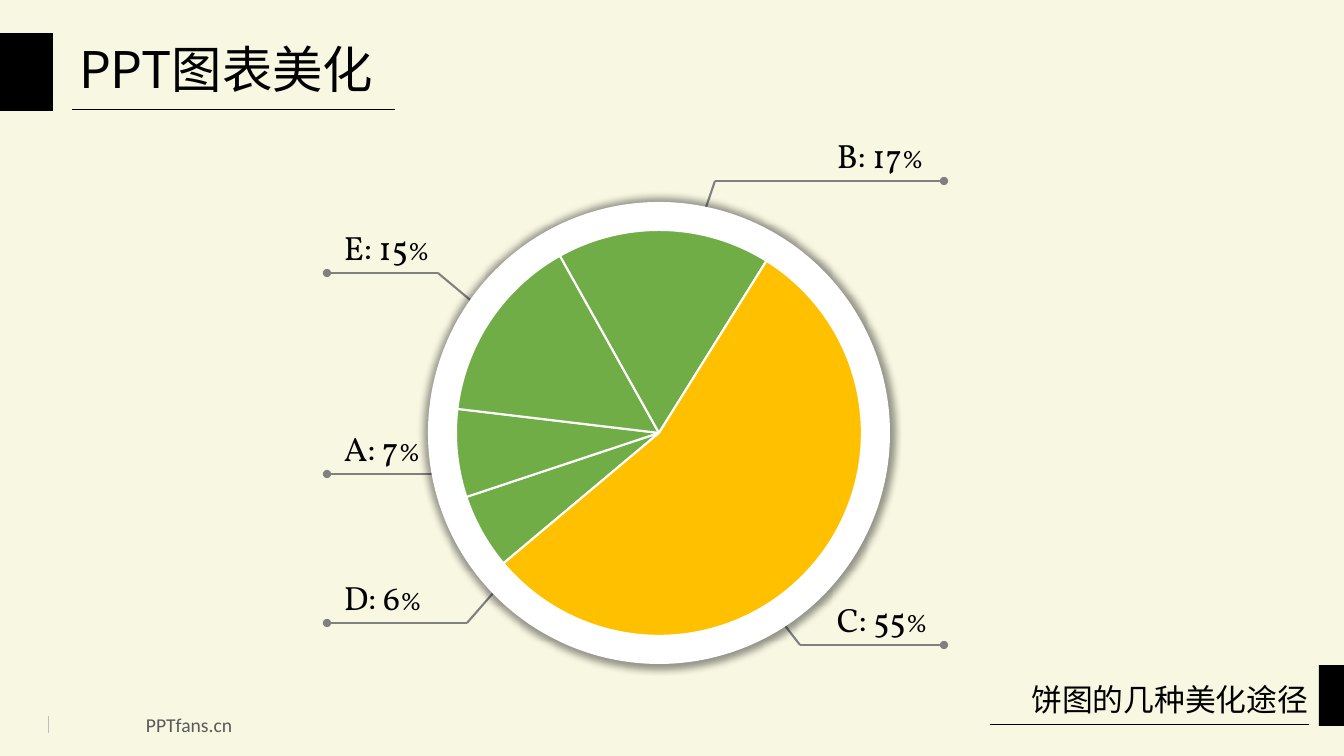
"""Build a slide with a ringed pie chart and leader-line labels."""
from lxml import etree
from pptx import Presentation
from pptx.chart.data import CategoryChartData
from pptx.dml.color import RGBColor
from pptx.enum.chart import XL_CHART_TYPE
from pptx.enum.shapes import MSO_CONNECTOR, MSO_SHAPE
from pptx.enum.text import MSO_ANCHOR, PP_ALIGN
from pptx.oxml import parse_xml
from pptx.oxml.ns import nsdecls, qn
from pptx.util import Emu, Pt

PIE = XL_CHART_TYPE.PIE
STRAIGHT = MSO_CONNECTOR.STRAIGHT
RECTANGLE, OVAL = MSO_SHAPE.RECTANGLE, MSO_SHAPE.OVAL
LEFT, RIGHT = PP_ALIGN.LEFT, PP_ALIGN.RIGHT
TOP = MSO_ANCHOR.TOP

THEME = {
    "paper": RGBColor.from_string("F8F7E2"),
    "ink": RGBColor.from_string("000000"),
    "white": RGBColor.from_string("FFFFFF"),
    "leader": RGBColor.from_string("808080"),
    "tick": RGBColor.from_string("BFBFBF"),
    "footer": RGBColor.from_string("595959"),
    "green": RGBColor.from_string("70AD47"),
    "amber": RGBColor.from_string("FFC000"),
    "cjk": "Noto Sans CJK SC",
    "serif": "Vollkorn",
    "sans": "Calibri",
    "title_size": 36,
    "label_size": 24,
    "caption_size": 22,
    "percent_size": 18,
    "footer_size": 14,
}


def px(*lengths):
    """Turn pixel lengths into EMU."""
    return [Emu(round(length * 914400 / 100.8)) for length in lengths]


def write(frame, runs, font_name, color, align=LEFT, wrap=True):
    """Fill a text frame with one paragraph of (text, size) runs."""
    frame.word_wrap = wrap
    frame.vertical_anchor = TOP
    paragraph = frame.paragraphs[0]
    paragraph.alignment = align
    for text, size in runs:
        run = paragraph.add_run()
        run.text = text
        for attribute, value in {"name": font_name, "size": Pt(size)}.items():
            setattr(run.font, attribute, value)
        run.font.color.rgb = color
        east_asian = etree.SubElement(run.font._element, qn("a:ea"))
        east_asian.set("typeface", font_name)


deck = Presentation()
deck.slide_width, deck.slide_height = px(1344, 756)
slide = deck.slides.add_slide(deck.slide_layouts[5])
slide.background.fill.solid()
slide.background.fill.fore_color.rgb = THEME["paper"]

title = slide.shapes.title
title.left, title.top, title.width, title.height = px(69, 33, 539, 72)
write(title.text_frame, [("PPT图表美化", THEME["title_size"])], THEME["cjk"], THEME["ink"])

for bar_box in [(0, 33, 53, 78), (1319, 665, 25, 61)]:
    bar = slide.shapes.add_shape(RECTANGLE, *px(*bar_box))
    bar.shadow.inherit = False
    bar.fill.solid()
    bar.fill.fore_color.rgb = THEME["ink"]
    bar.line.fill.background()

lines = [
    ((72, 109), (395, 109), "ink", 0.5, False),
    ((990, 724), (1309, 724), "ink", 0.5, False),
    ((49, 733), (49, 716), "tick", 0.75, False),
]
leaders = [
    ("C: 55", (773, 610), (800, 645), 944, 827),
    ("D: 6", (508, 576), (467, 623), 327, 334),
    ("A: 7", None, (457, 474), 327, 334),
    ("E: 15", (487, 314), (438, 273), 327, 334),
    ("B: 17", (701, 222), (715, 181), 944, 827),
]
for label, rim, elbow, dot_x, label_x in leaders:
    if rim:
        lines.append((rim, elbow, "leader", 1.5, False))
    lines.append((elbow, (dot_x, elbow[1]), "leader", 1.5, True))
    label_area = slide.shapes.add_textbox(*px(label_x, elbow[1] - 51, 134, 50))
    label_runs = [(label, THEME["label_size"]), ("%", THEME["percent_size"])]
    write(label_area.text_frame, label_runs, THEME["serif"], THEME["ink"])

for start, end, color, weight, dotted in lines:
    stroke = slide.shapes.add_connector(STRAIGHT, *px(*start, *end))
    stroke.line.color.rgb = THEME[color]
    stroke.line.width = Pt(weight)
    if dotted:
        etree.SubElement(stroke.line._get_or_add_ln(), qn("a:tailEnd")).set("type", "oval")
    etree.SubElement(stroke._element.spPr, qn("a:effectLst"))

ring = slide.shapes.add_shape(OVAL, *px(442, 216, 434, 434))
ring.fill.solid()
ring.fill.fore_color.rgb = THEME["white"]
ring.line.color.rgb = THEME["white"]
ring.line.width = Pt(20)
ring._element.spPr.append(parse_xml(
    f'<a:effectLst {nsdecls("a")}><a:outerShdw blurRad="63500" sx="102000" sy="102000" '
    'algn="ctr" rotWithShape="0"><a:srgbClr val="000000"><a:alpha val="40000"/>'
    '</a:srgbClr></a:outerShdw></a:effectLst>'))

shares = CategoryChartData()
shares.categories = ["1", "2", "3", "4", "5"]
shares.add_series("Series 1", (6, 7, 15, 17, 55))
chart_x, chart_y, chart_w, chart_h = 380, 190, 741, 490
pie_x, pie_y, pie_size = 456, 230, 406
chart = slide.shapes.add_chart(PIE, *px(chart_x, chart_y, chart_w, chart_h), shares).chart
for attribute, value in {"has_title": False, "has_legend": False}.items():
    setattr(chart, attribute, value)
for attribute, value in {"name": THEME["sans"], "size": Pt(THEME["percent_size"])}.items():
    setattr(chart.font, attribute, value)
chart.font.color.rgb = THEME["ink"]

pie = chart.plots[0]
pie.vary_by_categories = True
for index, color in enumerate(["green"] * 4 + ["amber"]):
    wedge = pie.series[0].points[index].format
    wedge.fill.solid()
    wedge.fill.fore_color.rgb = THEME[color]
    wedge.line.color.rgb = THEME["white"]
    wedge.line.width = Pt(1.5)

pie_xml = pie._element
for old_angle in pie_xml.findall(qn("c:firstSliceAng")):
    pie_xml.remove(old_angle)
etree.SubElement(pie_xml, qn("c:firstSliceAng")).set("val", "230")
plot_area = pie_xml.getparent()
for old_layout in plot_area.findall(qn("c:layout")):
    plot_area.remove(old_layout)
layout = etree.Element(qn("c:layout"))
manual = etree.SubElement(layout, qn("c:manualLayout"))
for tag, value in {
    "layoutTarget": "inner",
    "xMode": "edge",
    "yMode": "edge",
    "x": (pie_x - chart_x) / chart_w,
    "y": (pie_y - chart_y) / chart_h,
    "w": pie_size / chart_w,
    "h": pie_size / chart_h,
}.items():
    etree.SubElement(manual, qn(f"c:{tag}")).set("val", str(value))
plot_area.insert(0, layout)

footer = slide.shapes.add_textbox(*px(136, 708, 108, 34))
write(footer.text_frame, [("PPTfans.cn", THEME["footer_size"])], THEME["sans"],
      THEME["footer"], wrap=False)
caption = slide.shapes.add_textbox(*px(978, 676, 340, 47))
write(caption.text_frame, [("饼图的几种美化途径", THEME["caption_size"])], THEME["cjk"],
      THEME["ink"], align=RIGHT)

deck.save("out.pptx")
